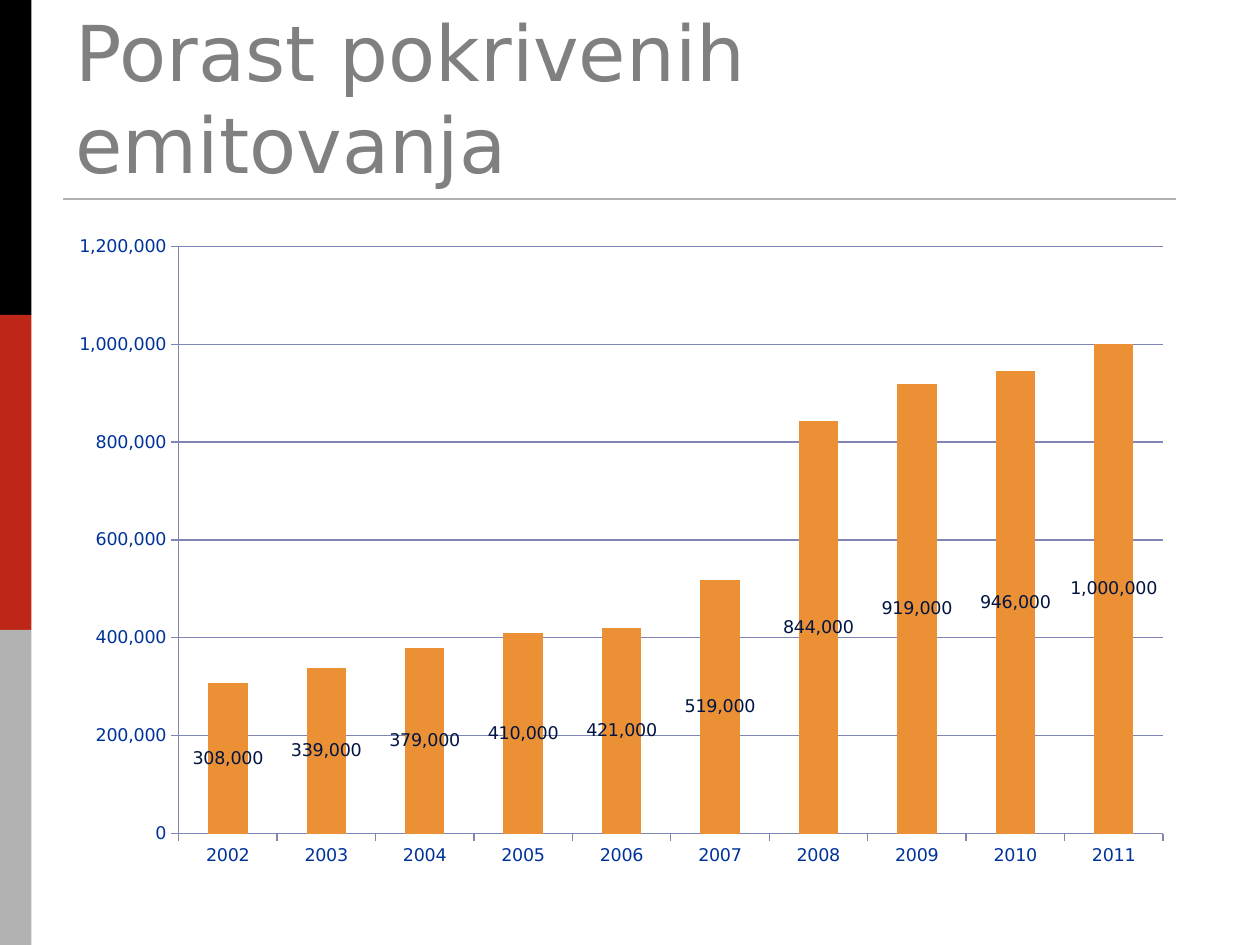
import pptx
import pptx.chart.data
import pptx.dml.color
import pptx.enum.chart
import pptx.enum.shapes
import pptx.enum.text
import pptx.oxml
import pptx.oxml.ns
import pptx.util

WIDTH, HEIGHT = 10, 7.5
FONT = "DejaVu Sans"
COLOURS = {
    "black": "000000",
    "red": "BE2618",
    "silver": "B2B2B2",
    "title": "808080",
    "axis": "003399",
    "grid": "7F85B5",
    "bar": "EB9035",
    "label": "001541",
}
COVERAGE = {
    "2002": 308000,
    "2003": 339000,
    "2004": 379000,
    "2005": 410000,
    "2006": 421000,
    "2007": 519000,
    "2008": 844000,
    "2009": 919000,
    "2010": 946000,
    "2011": 1000000,
}


def colour(name):
    return pptx.dml.color.RGBColor.from_string(COLOURS[name])


def inches(*lengths):
    return [pptx.util.Inches(length) for length in lengths]


def style_font(font, size, name):
    font.name = FONT
    font.size = pptx.util.Pt(size)
    font.bold = False
    font.color.rgb = colour(name)


def style_line(line, name, width):
    line.color.rgb = colour(name)
    line.width = pptx.util.Pt(width)


def add_side_bands(page, box):
    left, top, width, height = box
    names = ("black", "red", "silver")
    step = height / len(names)
    for row, name in enumerate(names):
        band = page.shapes.add_shape(
            pptx.enum.shapes.MSO_SHAPE.RECTANGLE,
            *inches(left, top + row * step, width, step),
        )
        band.shadow.inherit = False
        band.fill.solid()
        band.fill.fore_color.rgb = colour(name)
        band.line.fill.background()


def add_rule(page, box):
    left, top, width, height = box
    rule = page.shapes.add_connector(
        pptx.enum.shapes.MSO_CONNECTOR.STRAIGHT,
        *inches(left, top, left + width, top + height),
    )
    style_line(rule.line, "silver", 1.5)
    rule._element.spPr.append(pptx.oxml.parse_xml(
        f"<a:effectLst {pptx.oxml.ns.nsdecls('a')}/>"))


def fill_title(page, box, text):
    title = page.shapes.title
    title.left, title.top, title.width, title.height = inches(*box)
    frame = title.text_frame
    frame.word_wrap = True
    frame.auto_size = pptx.enum.text.MSO_AUTO_SIZE.NONE
    frame.vertical_anchor = pptx.enum.text.MSO_ANCHOR.BOTTOM
    para = frame.paragraphs[0]
    para.alignment = pptx.enum.text.PP_ALIGN.LEFT
    span = para.add_run()
    span.text = text
    style_font(span.font, 44, "title")


def set_plot_layout(chart, shares):
    area = chart._chartSpace.chart.plotArea
    for layout in area.findall(pptx.oxml.ns.qn("c:layout")):
        area.remove(layout)
    sizes = "".join(f'<c:{key} val="{share}"/>' for key, share in shares.items())
    area.insert(0, pptx.oxml.parse_xml(
        f"<c:layout {pptx.oxml.ns.nsdecls('c')}><c:manualLayout>"
        '<c:layoutTarget val="inner"/><c:xMode val="edge"/><c:yMode val="edge"/>'
        f"{sizes}</c:manualLayout></c:layout>"))


def add_coverage_chart(page, box):
    data = pptx.chart.data.CategoryChartData(number_format="#,##0")
    data.categories = list(COVERAGE)
    data.add_series("Series 1", list(COVERAGE.values()))
    chart = page.shapes.add_chart(
        pptx.enum.chart.XL_CHART_TYPE.COLUMN_STACKED, *inches(*box), data
    ).chart
    chart.has_legend = False
    chart.has_title = False
    style_font(chart.font, 10, "axis")
    set_plot_layout(chart, {"x": 0.11, "y": 0.03, "w": 0.87, "h": 0.9})

    for axis in (chart.category_axis, chart.value_axis):
        axis.major_tick_mark = pptx.enum.chart.XL_TICK_MARK.OUTSIDE
        axis.minor_tick_mark = pptx.enum.chart.XL_TICK_MARK.NONE
        style_line(axis.format.line, "grid", 0.75)
        style_font(axis.tick_labels.font, 10, "axis")
    scale = chart.value_axis
    scale.minimum_scale, scale.maximum_scale, scale.major_unit = 0, 1200000, 200000
    scale.tick_labels.number_format = "#,##0;\\-#,##0"
    scale.tick_labels.number_format_is_linked = False
    scale.has_major_gridlines = True
    style_line(scale.major_gridlines.format.line, "grid", 0.75)

    plot = chart.plots[0]
    plot.vary_by_categories = False
    plot.gap_width = 150
    plot.overlap = 100
    bars = plot.series[0].format
    bars.fill.solid()
    bars.fill.fore_color.rgb = colour("bar")
    bars.line.fill.background()
    plot.has_data_labels = True
    labels = plot.data_labels
    labels.show_value = True
    labels.number_format = "#,##0"
    labels.number_format_is_linked = False
    labels.position = pptx.enum.chart.XL_LABEL_POSITION.CENTER
    style_font(labels.font, 10, "label")


def main():
    deck = pptx.Presentation()
    deck.slide_width, deck.slide_height = inches(WIDTH, HEIGHT)
    page = deck.slides.add_slide(deck.slide_layouts.get_by_name("Title Only"))
    add_side_bands(page, (0, 0, WIDTH / 40, HEIGHT))
    add_rule(page, (WIDTH / 20, 1.58, 8.83, 0))
    fill_title(page, (WIDTH / 20, 0.3, 9, HEIGHT / 6), "Porast pokrivenih emitovanja")
    add_coverage_chart(page, (0.43, 1.8, 8.98, 5.18))
    deck.save("out.pptx")


if __name__ == "__main__":
    main()
